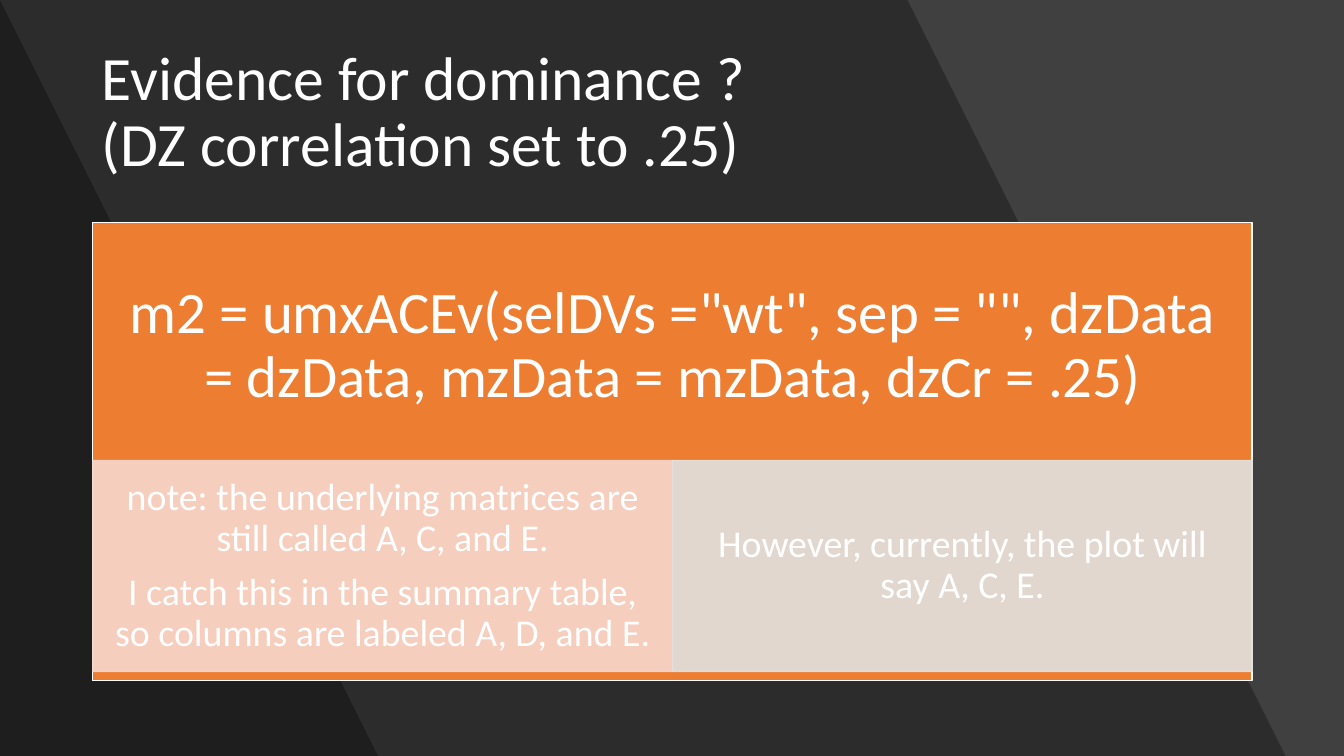
from lxml import etree
from pptx import Presentation, util as u
from pptx.dml.color import RGBColor
from pptx.enum import shapes, text
from pptx.oxml.ns import qn

WHITE = RGBColor(0xFF, 0xFF, 0xFF)
BLACK = RGBColor(0x00, 0x00, 0x00)
CHARCOAL = RGBColor(0x40, 0x40, 0x40)
ORANGE = RGBColor(0xED, 0x7D, 0x31)
PEACH = RGBColor(0xF8, 0xD7, 0xCE)
PALE_GREY = RGBColor(0xE1, 0xE1, 0xE1)

WIDTH, HEIGHT = 13.33, 7.5
LEFT, PANEL_TOP = 0.92, 2.21
PANEL_W, PANEL_H = 11.5, 4.54
COL_W = PANEL_W / 2
CODE_H = 2.45
NOTE_TOP, NOTE_H = 4.57, 2.09


def paint(part, color, opacity=100, line=None):
    """Fill a shape, optionally see-through, with a 1 pt line or none."""
    part.shadow.inherit = False
    part.fill.solid()
    part.fill.fore_color.rgb = color
    if line is None:
        part.line.fill.background()
    else:
        part.line.color.rgb = line
        part.line.width = u.Pt(1)
    if opacity < 100:
        for rgb in part._element.spPr.iter(qn("a:srgbClr")):
            etree.SubElement(rgb, qn("a:alpha"), val=str(opacity * 1000))


def write(part, *paragraphs, size, align=text.PP_ALIGN.CENTER, inset=(0.1, 0.05)):
    """Write paragraphs in white Calibri, centred vertically."""
    frame = part.text_frame
    frame.word_wrap = True
    frame.vertical_anchor = text.MSO_ANCHOR.MIDDLE
    frame.margin_left = frame.margin_right = u.Inches(inset[0])
    frame.margin_top = frame.margin_bottom = u.Inches(inset[1])
    for i, words in enumerate(paragraphs):
        p = frame.add_paragraph() if i else frame.paragraphs[0]
        p.text = words
        p.alignment = align
        p.line_spacing = 0.9
        if i:
            p.space_before = u.Pt(round(0.35 * size, 1))
        for run in p.runs:
            run.font.name = "Calibri"
            run.font.size = u.Pt(size)
            run.font.color.rgb = WHITE


deck = Presentation()
deck.slide_width, deck.slide_height = u.Inches(WIDTH), u.Inches(HEIGHT)
slide = deck.slides.add_slide(deck.slide_layouts[6])

# Background with two slanted shades
slide.background.fill.solid()
slide.background.fill.fore_color.rgb = CHARCOAL
for top_x, bottom_x in ((9.42, 12.89), (0.44, 3.92)):
    outline = slide.shapes.build_freeform(0, 0, scale=u.Inches(1))
    outline.add_line_segments(
        [(top_x, 0), (bottom_x, HEIGHT), (0, HEIGHT)], close=True)
    paint(outline.convert_to_shape(), BLACK, opacity=30)

# Title
title = slide.shapes.add_textbox(
    u.Inches(0.91), u.Inches(0.4), u.Inches(11.51), u.Inches(1.45))
write(title, "Evidence for dominance ?\v(DZ correlation set to .25)",
      size=44, align=text.PP_ALIGN.LEFT)

# Orange panel with the model call
panel = slide.shapes.add_shape(
    shapes.MSO_SHAPE.RECTANGLE,
    u.Inches(LEFT), u.Inches(PANEL_TOP), u.Inches(PANEL_W), u.Inches(PANEL_H))
paint(panel, ORANGE, line=WHITE)
model_call = slide.shapes.add_textbox(
    u.Inches(LEFT), u.Inches(PANEL_TOP), u.Inches(PANEL_W), u.Inches(CODE_H))
write(model_call,
      'm2 = umxACEv(selDVs ="wt", sep = "", dzData = dzData, mzData = mzData, dzCr = .25)',
      size=42, inset=(0.33, 0.33))

# Two notes side by side
notes = (
    (PEACH, ("note: the underlying matrices are still called A, C, and E.",
             "I catch this in the summary table, so columns are labeled A, D, and E.")),
    (PALE_GREY, ("However, currently, the plot will say A, C, E.",)),
)
for column, (tint, sentences) in enumerate(notes):
    note = slide.shapes.add_shape(
        shapes.MSO_SHAPE.RECTANGLE,
        u.Inches(LEFT + column * COL_W), u.Inches(NOTE_TOP),
        u.Inches(COL_W), u.Inches(NOTE_H))
    paint(note, tint, opacity=90, line=tint)
    write(note, *sentences, size=27, inset=(0.21, 0.04))

deck.save("out.pptx")
